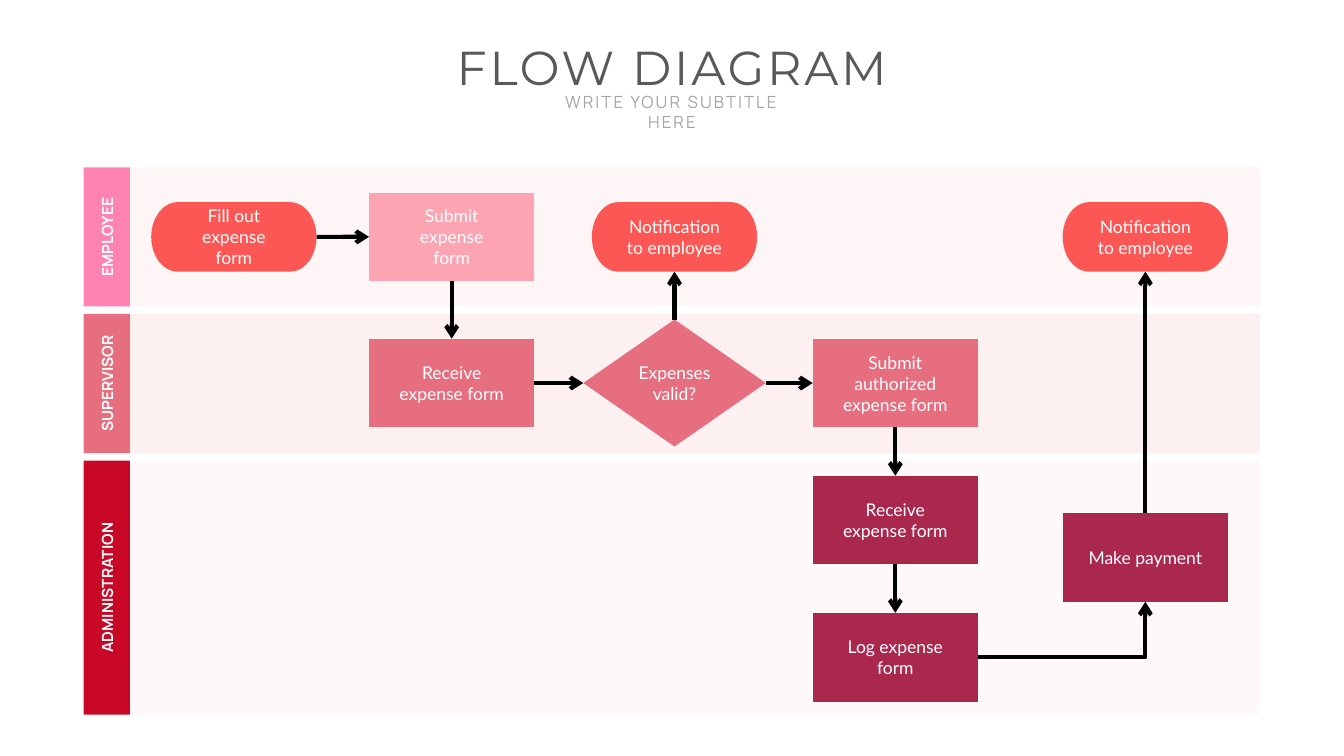
from pptx import Presentation
from pptx import util as u
from pptx.dml.color import RGBColor
from pptx.enum import shapes, text
from pptx.oxml import ns
from lxml import etree

WHITE = RGBColor(0xFF, 0xFF, 0xFF)
BLACK = RGBColor(0, 0, 0)
DARK_GRAY = RGBColor(0x59, 0x59, 0x59)
LIGHT_GRAY = RGBColor(0xA6, 0xA6, 0xA6)
PINK = RGBColor(0xFF, 0x83, 0xB0)
ROSE = RGBColor(0xE7, 0x6E, 0x7F)
RED = RGBColor(0xC9, 0x07, 0x26)
BLUSH = RGBColor(0xFC, 0xA4, 0xB2)
PEACH = RGBColor(0xFE, 0xC4, 0xC3)
CORAL = RGBColor(0xFC, 0x57, 0x55)
WINE = RGBColor(0xAA, 0x27, 0x4E)

PROCESS = shapes.MSO_SHAPE.FLOWCHART_PROCESS
TERMINATOR = shapes.MSO_SHAPE.FLOWCHART_TERMINATOR
DIAMOND = shapes.MSO_SHAPE.DIAMOND
SIZES = {PROCESS: (1.64, 0.88), TERMINATOR: (1.64, 0.69), DIAMOND: (1.81, 1.26)}
TOP, LEFT, BOTTOM, RIGHT = range(4)

TAB_WIDTH = 0.46
LANES = [
    ("EMPLOYEE", 1.38, PINK, BLUSH),
    ("SUPERVISOR", 1.38, ROSE, ROSE),
    ("ADMINISTRATION", 2.52, RED, PEACH),
]
COLUMNS = [1.49, 3.65, 5.86, 8.05, 10.53]
ROWS = [0.69, 2.14, 3.5, 3.87, 4.86]
STEPS = {
    "fill": ("Fill out expense form", TERMINATOR, CORAL, 0, 0, 0.24),
    "submit": ("Submit expense form", PROCESS, BLUSH, 1, 0, 0.32),
    "rejected": ("Notification to employee", TERMINATOR, CORAL, 2, 0, 0.24),
    "paid": ("Notification to employee", TERMINATOR, CORAL, 4, 0, 0.24),
    "receive": ("Receive expense form", PROCESS, ROSE, 1, 1, 0.23),
    "valid": ("Expenses valid?", DIAMOND, ROSE, 2, 1, 0),
    "authorize": ("Submit authorized expense form", PROCESS, ROSE, 3, 1, 0.23),
    "admin": ("Receive expense form", PROCESS, WINE, 3, 2, 0.23),
    "log": ("Log expense form", PROCESS, WINE, 3, 4, 0.23),
    "pay": ("Make payment", PROCESS, WINE, 4, 3, 0.23),
}
ARROWS = [
    ("fill", RIGHT, "submit", LEFT),
    ("submit", BOTTOM, "receive", TOP),
    ("receive", RIGHT, "valid", LEFT),
    ("valid", TOP, "rejected", BOTTOM),
    ("valid", RIGHT, "authorize", LEFT),
    ("authorize", BOTTOM, "admin", TOP),
    ("admin", BOTTOM, "log", TOP),
    ("log", RIGHT, "pay", BOTTOM),
    ("pay", TOP, "paid", BOTTOM),
]


def write(shape, words, font, size, color, bold=False, spacing=0, wrap=True,
          anchor=text.MSO_ANCHOR.MIDDLE, margins=(0.1, 0.05)):
    frame = shape.text_frame
    frame.auto_size = text.MSO_AUTO_SIZE.NONE
    frame.word_wrap = wrap
    frame.vertical_anchor = anchor
    frame.margin_left = frame.margin_right = u.Inches(margins[0])
    frame.margin_top = frame.margin_bottom = u.Inches(margins[1])
    para = frame.paragraphs[0]
    para.alignment = text.PP_ALIGN.CENTER
    para.space_before = u.Pt(0)
    span = para.add_run()
    span.text = words
    span.font.name = font
    span.font.size = u.Pt(size)
    span.font.bold = bold
    span.font.color.rgb = color
    if spacing:
        span.font._element.set("spc", str(int(spacing * 100)))


def add_block(page, kind, box, color, opacity=100):
    shape = page.shapes.add_shape(kind, *map(u.Inches, box))
    shape.shadow.inherit = False
    shape.fill.solid()
    shape.fill.fore_color.rgb = color
    shape.line.fill.background()
    if opacity < 100:
        tint = shape.element.spPr.find(".//" + ns.qn("a:srgbClr"))
        etree.SubElement(tint, ns.qn("a:alpha")).set("val", str(opacity * 1000))
    return shape


def add_heading(page, box):
    left, top, width, height = box
    title, subtitle = page.placeholders
    parts = [(title, width, 0, 0.67), (subtitle, 2.65, 0.53, height - 0.53)]
    for holder, span_width, offset, tall in parts:
        holder.left = u.Inches(left + (width - span_width) / 2)
        holder.top = u.Inches(top + offset)
        holder.width, holder.height = u.Inches(span_width), u.Inches(tall)
    write(title, "FLOW DIAGRAM", "Montserrat", 34, DARK_GRAY, spacing=2,
          wrap=False, anchor=text.MSO_ANCHOR.TOP)
    write(subtitle, "WRITE YOUR SUBTITLE HERE", "Manrope", 12, LIGHT_GRAY,
          spacing=1.5, anchor=text.MSO_ANCHOR.TOP)


def add_lanes(page, box):
    left, top, width, height = box
    gap = (height - sum(lane[1] for lane in LANES)) / (len(LANES) - 1)
    rect = shapes.MSO_SHAPE.RECTANGLE
    for name, tall, tab_color, lane_color in LANES:
        add_block(page, rect, (left, top, TAB_WIDTH, tall), tab_color)
        add_block(page, rect, (left + TAB_WIDTH, top, width - TAB_WIDTH, tall),
                  lane_color, opacity=10)
        label_box = (left + (TAB_WIDTH - tall) / 2, top + tall / 2 - 0.12, tall, 0.24)
        label = page.shapes.add_textbox(*map(u.Inches, label_box))
        label.rotation = 270
        write(label, name, "Manrope", 11, WHITE, bold=True, wrap=False,
              margins=(0.05, 0.03))
        top += tall + gap


def add_steps(page, box):
    left, top = box[:2]
    steps = {}
    for key, (words, kind, color, column, row, margin) in STEPS.items():
        width, height = SIZES[kind]
        step_box = (left + COLUMNS[column] - width / 2,
                    top + ROWS[row] - height / 2, width, height)
        steps[key] = add_block(page, kind, step_box, color)
        write(steps[key], words, "Lato", 12.5, WHITE, margins=(margin, 0))
    return steps


def add_arrows(page, steps):
    for start, start_side, end, end_side in ARROWS:
        bent = start_side % 2 != end_side % 2
        kind = shapes.MSO_CONNECTOR.ELBOW if bent else shapes.MSO_CONNECTOR.STRAIGHT
        arrow = page.shapes.add_connector(kind, 0, 0, 0, 0)
        arrow.begin_connect(steps[start], start_side)
        arrow.end_connect(steps[end], end_side)
        arrow.line.color.rgb = BLACK
        arrow.line.width = u.Pt(3)
        props = arrow.element.spPr
        if bent:
            props.find(ns.qn("a:prstGeom")).set("prst", "bentConnector2")
        tail = etree.SubElement(props.find(ns.qn("a:ln")), ns.qn("a:tailEnd"))
        tail.set("type", "arrow")
        etree.SubElement(props, ns.qn("a:effectLst"))


def main():
    deck = Presentation()
    deck.slide_width, deck.slide_height = u.Inches(13.33), u.Inches(7.5)
    page = deck.slides.add_slide(deck.slide_layouts[0])
    diagram_box = (0.83, 1.66, 11.67, 5.43)
    add_heading(page, (4.39, 0.33, 4.55, 1.03))
    add_lanes(page, diagram_box)
    add_arrows(page, add_steps(page, diagram_box))
    deck.save("out.pptx")


if __name__ == "__main__":
    main()
